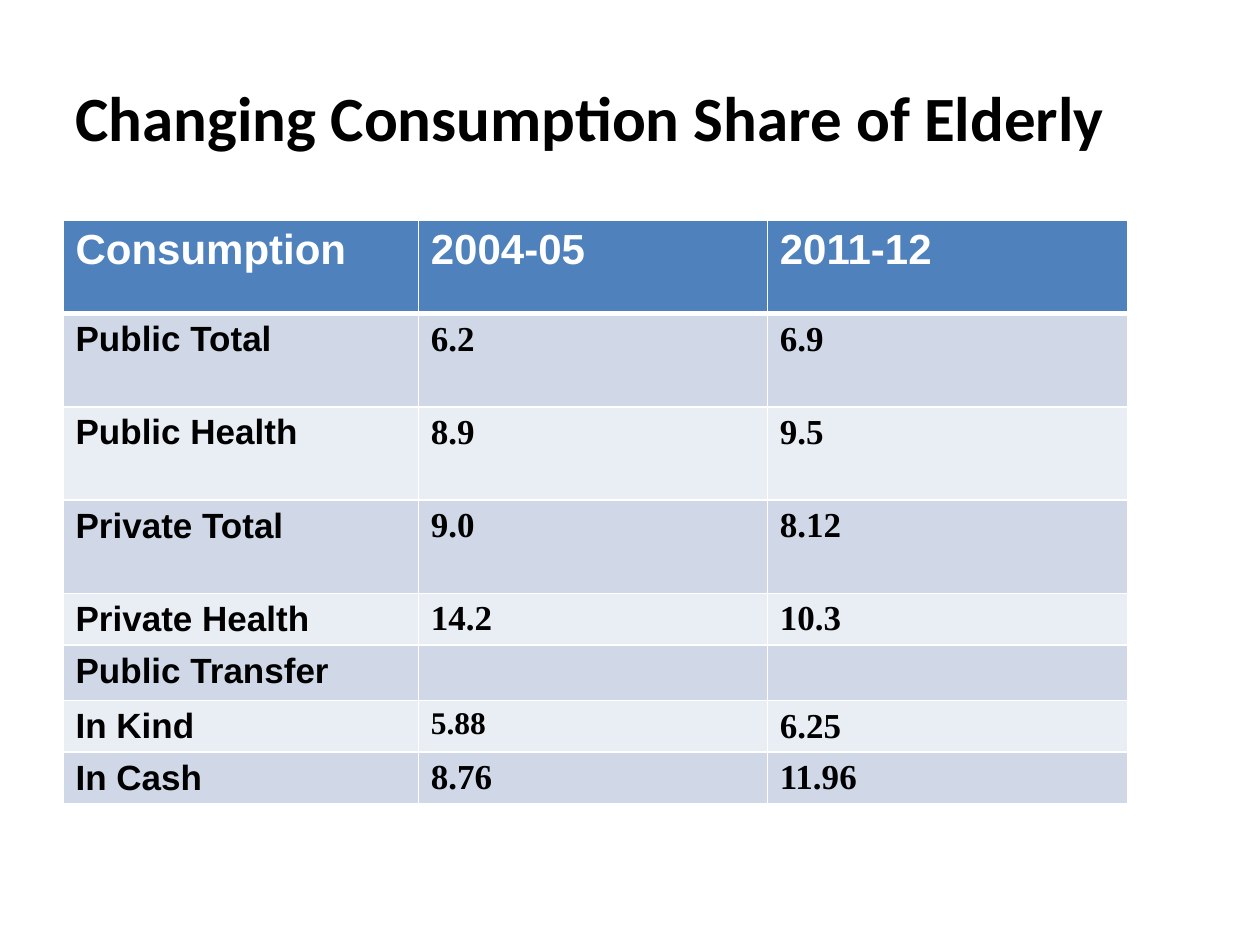
import pptx
import pptx.dml.color
import pptx.enum.text
import pptx.oxml
import pptx.oxml.ns
import pptx.util
from pptx.util import Inches

TITLE = "Changing Consumption Share of Elderly"
ROWS = [
    ("Consumption", "2004-05", "2011-12"),
    ("Public Total", "6.2", "6.9"),
    ("Public Health", "8.9", "9.5"),
    ("Private Total", "9.0", "8.12"),
    ("Private Health", "14.2", "10.3"),
    ("Public Transfer", "", ""),
    ("In Kind", "5.88", "6.25"),
    ("In Cash", "8.76", "11.96"),
]
COL_WIDTHS = [2.82, 2.77, 2.86]
ROW_HEIGHTS = [0.74] * 4 + [0.41, 0.44, 0.41, 0.41]
SMALLER_CELL = (6, 1)
COLORS = {"text": "000000", "white": "FFFFFF", "header": "4F81BD",
          "odd": "D0D8E8", "even": "E9EDF4"}


def rgb(name):
    return pptx.dml.color.RGBColor.from_string(COLORS[name])


def write(tf, text, color, **formats):
    p = tf.paragraphs[0]
    p.alignment = pptx.enum.text.PP_ALIGN.LEFT
    r = p.add_run()
    r.text = text
    r.font.color.rgb = rgb(color)
    for name, value in formats.items():
        setattr(r.font, name, value)


def add_borders(cell, widths):
    """Draw white cell borders; widths maps each side to points."""
    tc_pr = cell._tc.get_or_add_tcPr()
    for side, points in widths.items():
        tc_pr.append(pptx.oxml.parse_xml(
            f'<a:ln{side} {pptx.oxml.ns.nsdecls("a")} w="{pptx.util.Pt(points)}">'
            f'<a:solidFill><a:srgbClr val="{COLORS["white"]}"/></a:solidFill>'
            f'</a:ln{side}>'))


def add_title(s):
    title = s.shapes.title
    title.left, title.top, title.width, title.height = map(Inches, (0.5, 0.3, 9, 1.25))
    title.text_frame.vertical_anchor = pptx.enum.text.MSO_ANCHOR.MIDDLE
    write(title.text_frame, TITLE, "text", name="Calibri", size=pptx.util.Pt(36), bold=True)


def add_consumption_table(s):
    table = s.shapes.add_table(
        len(ROWS), len(COL_WIDTHS), Inches(0.5), Inches(1.75),
        Inches(sum(COL_WIDTHS)), Inches(sum(ROW_HEIGHTS))).table
    for column, width in zip(table.columns, COL_WIDTHS):
        column.width = Inches(width)
    for i, (row, height) in enumerate(zip(ROWS, ROW_HEIGHTS)):
        table.rows[i].height = Inches(height)
        band = "header" if i == 0 else "odd" if i % 2 else "even"
        for j, text in enumerate(row):
            cell = table.cell(i, j)
            add_borders(cell, {"L": 1, "R": 1, "T": 3 if i == 1 else 1,
                               "B": 3 if i == 0 else 1})
            cell.fill.solid()
            cell.fill.fore_color.rgb = rgb(band)
            if not text:
                continue
            size = 24 if i == 0 else 18 if (i, j) == SMALLER_CELL else 20
            write(cell.text_frame, text, "white" if i == 0 else "text",
                  name="Arial" if i == 0 or j == 0 else "Times New Roman",
                  size=pptx.util.Pt(size), bold=True)


def main():
    prs = pptx.Presentation()
    prs.slide_width, prs.slide_height = Inches(10), Inches(7.5)
    s = prs.slides.add_slide(prs.slide_layouts.get_by_name("Title Only"))
    add_title(s)
    add_consumption_table(s)
    prs.save("out.pptx")


if __name__ == "__main__":
    main()
